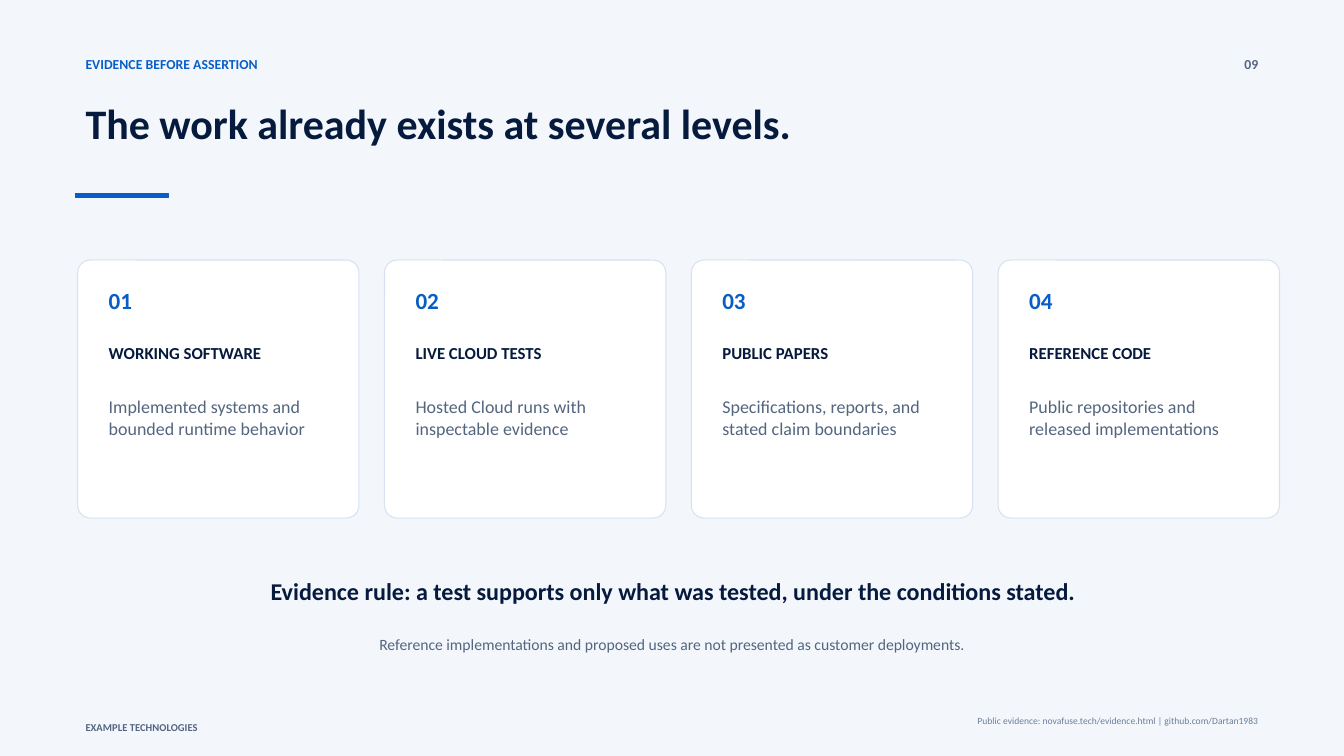
from dataclasses import dataclass

from pptx import Presentation
from pptx.dml.color import RGBColor
from pptx.enum.shapes import MSO_SHAPE
from pptx.enum.text import PP_ALIGN
from pptx.shapes.autoshape import Shape
from pptx.slide import Slide
from pptx.util import Inches, Pt


@dataclass(frozen=True)
class TextStyle:
    size: float
    color: str
    bold: bool = False


@dataclass(frozen=True)
class Theme:
    font: str = "Calibri"
    background: str = "F3F7FC"
    accent: str = "075EC7"
    card_fill: str = "FFFFFF"
    card_border: str = "D7E1EF"
    eyebrow: TextStyle = TextStyle(9.8, "075EC7", True)
    page_number: TextStyle = TextStyle(9.8, "53657F", True)
    title: TextStyle = TextStyle(30, "061A3D", True)
    card_number: TextStyle = TextStyle(16.5, "075EC7", True)
    card_heading: TextStyle = TextStyle(12, "061A3D", True)
    card_body: TextStyle = TextStyle(12.8, "53657F")
    evidence_rule: TextStyle = TextStyle(17.2, "061A3D", True)
    caveat: TextStyle = TextStyle(11.2, "53657F")
    company: TextStyle = TextStyle(7.5, "53657F", True)
    sources: TextStyle = TextStyle(6.8, "6B7D97")


@dataclass(frozen=True)
class Box:
    left: float
    top: float
    width: float
    height: float

    def lengths(self) -> tuple[int, int, int, int]:
        return (Inches(self.left), Inches(self.top),
                Inches(self.width), Inches(self.height))


@dataclass(frozen=True)
class Label:
    text: str
    box: Box
    style: TextStyle
    align: PP_ALIGN = PP_ALIGN.LEFT


@dataclass(frozen=True)
class EvidenceLevel:
    heading: str
    body: str


THEME = Theme()

LABELS = [
    Label("EVIDENCE BEFORE ASSERTION", Box(0.75, 0.5, 7.92, 0.25), THEME.eyebrow),
    Label("09", Box(12.08, 0.5, 0.5, 0.25), THEME.page_number, PP_ALIGN.RIGHT),
    Label("The work already exists at several levels.",
          Box(0.75, 0.92, 11.83, 0.96), THEME.title),
    Label("Evidence rule: a test supports only what was tested, "
          "under the conditions stated.",
          Box(1.21, 5.67, 10.92, 0.48), THEME.evidence_rule, PP_ALIGN.CENTER),
    Label("Reference implementations and proposed uses are not presented "
          "as customer deployments.",
          Box(1.56, 6.25, 10.21, 0.33), THEME.caveat, PP_ALIGN.CENTER),
    Label("EXAMPLE TECHNOLOGIES", Box(0.75, 7.1, 4.38, 0.19), THEME.company),
    Label("Public evidence: novafuse.tech/evidence.html | github.com/Dartan1983",
          Box(5.31, 7.04, 7.27, 0.29), THEME.sources, PP_ALIGN.RIGHT),
]

LEVELS = [
    EvidenceLevel("WORKING SOFTWARE",
                  "Implemented systems and bounded runtime behavior"),
    EvidenceLevel("LIVE CLOUD TESTS",
                  "Hosted Cloud runs with inspectable evidence"),
    EvidenceLevel("PUBLIC PAPERS",
                  "Specifications, reports, and stated claim boundaries"),
    EvidenceLevel("REFERENCE CODE",
                  "Public repositories and released implementations"),
]

ACCENT_RULE = Box(0.75, 1.92, 0.92, 0.04)
FIRST_CARD = Box(0.77, 2.58, 2.79, 2.56)
CARDS_RIGHT = 12.69
CARD_PADDING = 0.21
CARD_ROUNDING = 0.049


def add_label(slide: Slide, label: Label) -> None:
    frame = slide.shapes.add_textbox(*label.box.lengths()).text_frame
    frame.word_wrap = True
    paragraph = frame.paragraphs[0]
    paragraph.text = label.text
    paragraph.alignment = label.align
    paragraph.font.name = THEME.font
    paragraph.font.size = Pt(label.style.size)
    paragraph.font.bold = label.style.bold
    paragraph.font.color.rgb = RGBColor.from_string(label.style.color)


def add_panel(slide: Slide, kind: MSO_SHAPE, box: Box, fill: str,
              border: str, border_width: float) -> Shape:
    panel = slide.shapes.add_shape(kind, *box.lengths())
    panel.shadow.inherit = False
    panel.fill.solid()
    panel.fill.fore_color.rgb = RGBColor.from_string(fill)
    panel.line.color.rgb = RGBColor.from_string(border)
    panel.line.width = Pt(border_width)
    return panel


def add_card(slide: Slide, index: int, level: EvidenceLevel) -> None:
    pitch = (CARDS_RIGHT - FIRST_CARD.width - FIRST_CARD.left) / (len(LEVELS) - 1)
    left = FIRST_CARD.left + index * pitch
    box = Box(left, FIRST_CARD.top, FIRST_CARD.width, FIRST_CARD.height)
    card = add_panel(slide, MSO_SHAPE.ROUNDED_RECTANGLE, box,
                     THEME.card_fill, THEME.card_border, 0.75)
    card.adjustments[0] = CARD_ROUNDING

    text_left = left + CARD_PADDING
    text_width = FIRST_CARD.width - 2 * CARD_PADDING
    add_label(slide, Label(f"{index + 1:02}", Box(text_left, 2.79, 0.5, 0.35),
                           THEME.card_number))
    add_label(slide, Label(level.heading, Box(text_left, 3.35, text_width, 0.29),
                           THEME.card_heading))
    add_label(slide, Label(level.body, Box(text_left, 3.88, text_width, 0.77),
                           THEME.card_body))


def main() -> None:
    presentation = Presentation()
    presentation.slide_width = Inches(13.33)
    presentation.slide_height = Inches(7.5)
    slide = presentation.slides.add_slide(presentation.slide_layouts[6])
    slide.background.fill.solid()
    slide.background.fill.fore_color.rgb = RGBColor.from_string(THEME.background)

    add_panel(slide, MSO_SHAPE.RECTANGLE, ACCENT_RULE, THEME.accent, THEME.accent, 0)
    for index, level in enumerate(LEVELS):
        add_card(slide, index, level)
    for label in LABELS:
        add_label(slide, label)

    presentation.save("out.pptx")


if __name__ == "__main__":
    main()
